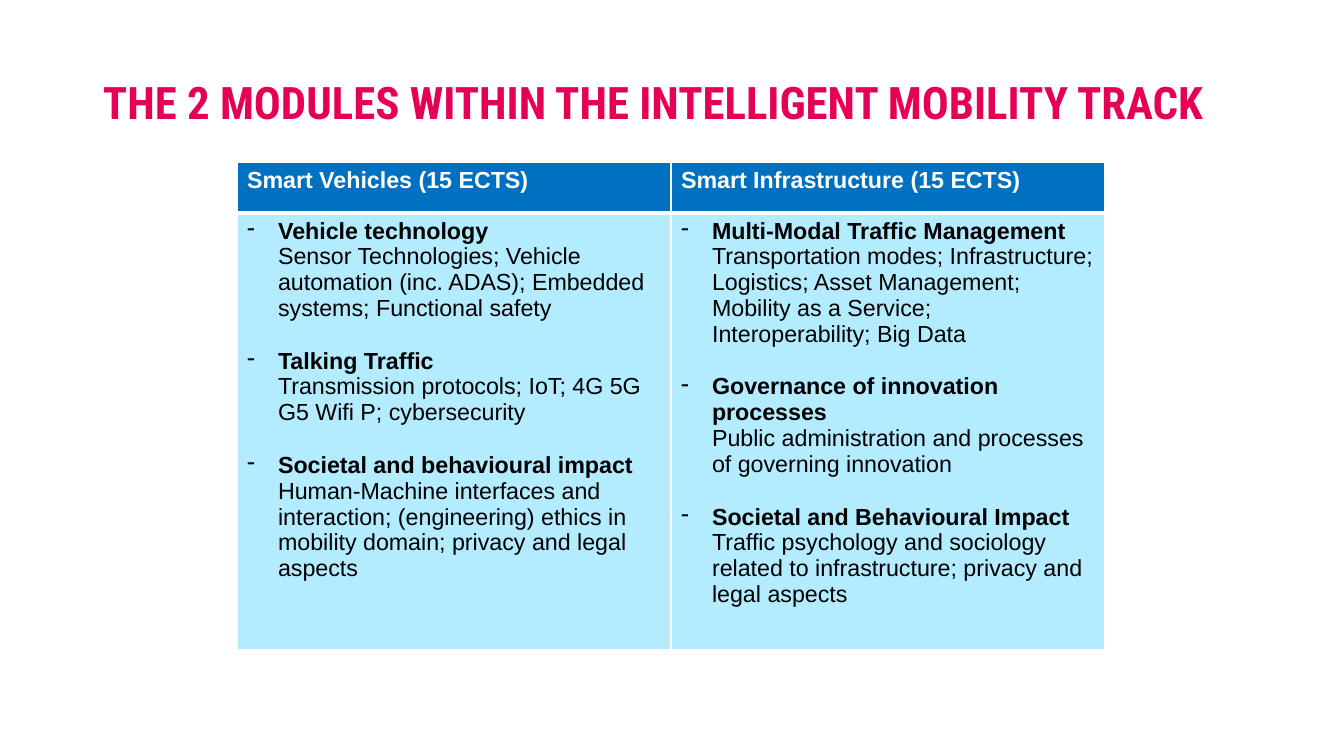
from pptx import Presentation
from pptx.dml.color import RGBColor
from pptx.enum.text import MSO_ANCHOR
from pptx.oxml import parse_xml
from pptx.oxml.ns import nsdecls
from pptx.util import Pt

BOTTOM = MSO_ANCHOR.BOTTOM
PINK = RGBColor(0xE5, 0x00, 0x56)
BLUE = RGBColor(0x00, 0x70, 0xC0)
PALE = RGBColor(0xB3, 0xEB, 0xFF)
WHITE = RGBColor(0xFF, 0xFF, 0xFF)
BLACK = RGBColor(0x00, 0x00, 0x00)
SCALE = 914400 / 100.8


def px(n):
    return round(n * SCALE)


def style(font, face, size, color):
    font.name = face
    font.size = Pt(size)
    font.color.rgb = color


MODULES = [
    ("Smart Vehicles (15 ECTS)", [
        ("Vehicle technology",
         "Sensor Technologies; Vehicle automation (inc. ADAS); Embedded systems; Functional safety"),
        ("Talking Traffic",
         "Transmission protocols; IoT; 4G 5G G5 Wifi P; cybersecurity"),
        ("Societal and behavioural impact",
         "Human-Machine interfaces and interaction; (engineering) ethics in mobility domain; "
         "privacy and legal aspects"),
    ]),
    ("Smart Infrastructure (15 ECTS)", [
        ("Multi-Modal Traffic Management",
         "Transportation modes; Infrastructure; Logistics; Asset Management; "
         "Mobility as a Service; Interoperability; Big Data"),
        ("Governance of innovation processes",
         "Public administration and processes of governing innovation"),
        ("Societal and Behavioural Impact",
         "Traffic psychology and sociology related to infrastructure; privacy and legal aspects"),
    ]),
]

deck = Presentation()
deck.slide_width, deck.slide_height = px(1344), px(756)
slide = deck.slides.add_slide(deck.slide_layouts[5])

title = slide.shapes.title
title.left, title.top, title.width, title.height = px(93), px(40), px(1159), px(146)
frame = title.text_frame
frame.text = "THE 2 MODULES WITHIN THE INTELLIGENT MOBILITY TRACK"
frame.word_wrap = True
frame.vertical_anchor = BOTTOM
frame.margin_left = frame.margin_right = px(10)
frame.margin_bottom = px(57)
head = frame.paragraphs[0]
head.alignment = 1
head.line_spacing = 0.9
style(head.font, "Roboto Condensed", 32, PINK)
head.font.bold = True

table = slide.shapes.add_table(2, 2, px(237), px(162), px(868), px(488)).table
table.horz_banding = False
table.rows[0].height, table.rows[1].height = px(51), px(437)

for col, (name, topics) in enumerate(MODULES):
    table.columns[col].width = px(434)
    for row, shade in enumerate((BLUE, PALE)):
        cell = table.cell(row, col)
        props = cell._tc.get_or_add_tcPr()
        for side in "LRTB":
            thick = 3 if (row, side) in ((0, "B"), (1, "T")) else 1
            props.append(parse_xml(
                f'<a:ln{side} {nsdecls("a")} w="{Pt(thick)}"><a:solidFill>'
                f'<a:srgbClr val="{WHITE}"/></a:solidFill></a:ln{side}>'))
        cell.fill.solid()
        cell.fill.fore_color.rgb = shade

    top = table.cell(0, col).text_frame.paragraphs[0]
    top.text = name
    style(top.font, "Arial", 16.6, WHITE)
    top.font.bold = True

    body = table.cell(1, col).text_frame
    for i, (topic, detail) in enumerate(topics):
        para = body.add_paragraph() if i else body.paragraphs[0]
        if i:
            para.space_before = Pt(19)
        form = para._p.get_or_add_pPr()
        form.set("marL", str(px(31)))
        form.set("indent", str(px(-31)))
        form.append(parse_xml(f'<a:buChar {nsdecls("a")} char="-"/>'))
        style(para.font, "Arial", 16.6, BLACK)
        lead = para.add_run()
        lead.text = topic
        lead.font.bold = True
        para.add_line_break()
        rest = para.add_run()
        rest.text = detail
        rest.font.bold = False

deck.save("out.pptx")
